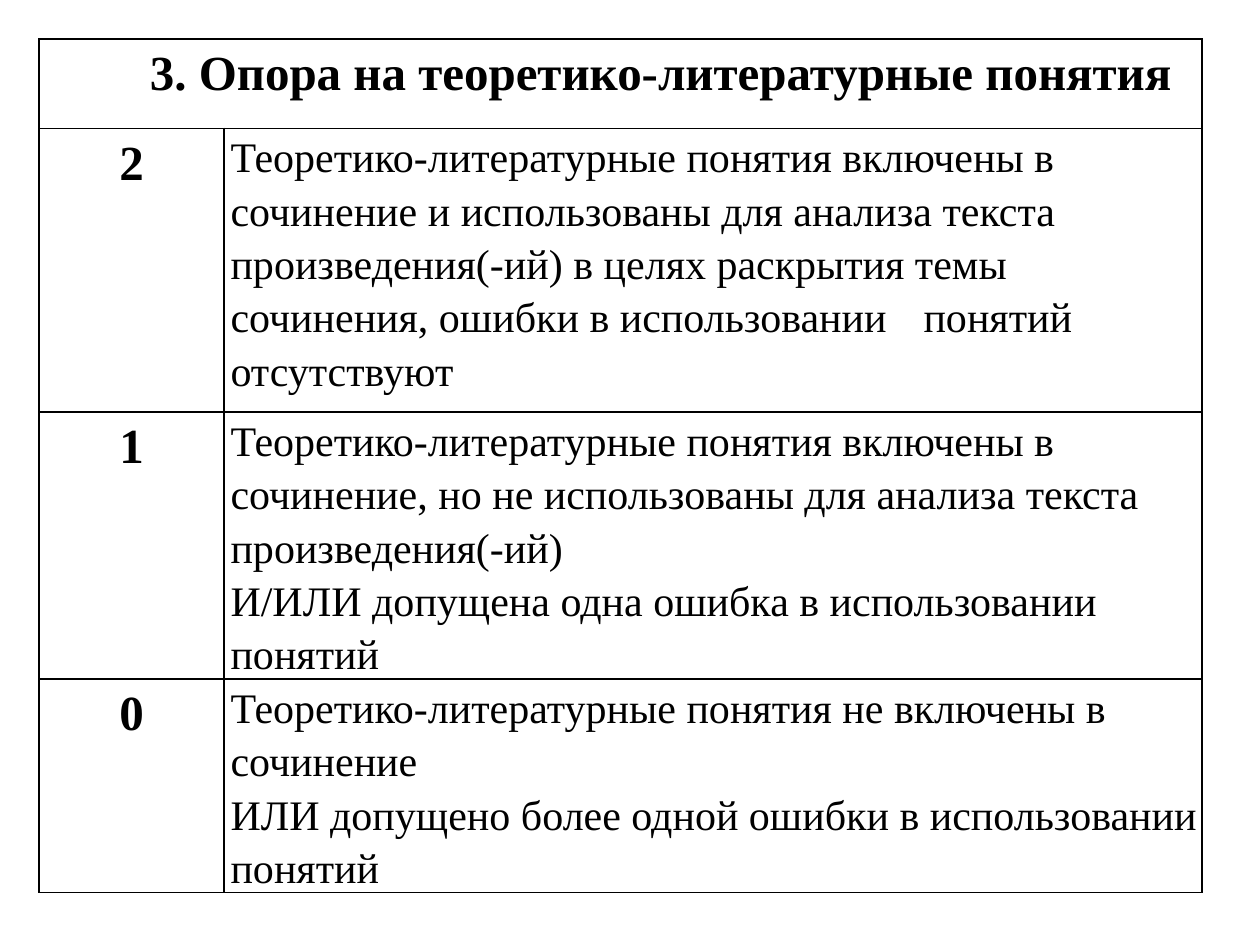
from pptx import Presentation, util as u
from pptx.dml.color import RGBColor
from pptx.enum import text
from pptx.oxml import parse_xml
from pptx.oxml.ns import nsdecls

BLACK = RGBColor(0, 0, 0)
WHITE = RGBColor(255, 255, 255)
HEADING = {"size": u.Pt(28), "bold": True}
BODY = {"size": u.Pt(24), "bold": False}
COLUMN_WIDTHS = [1.47, 7.76]
ROW_HEIGHTS = [0.71, 2.25, 1.62, 1.64]
CRITERION = "3. Опора на теоретико-литературные понятия"
SCORES = [
    ("2", ["Теоретико-литературные понятия включены в сочинение и использованы "
           "для анализа текста произведения(-ий) в целях раскрытия темы сочинения, "
           "ошибки в использовании\tпонятий отсутствуют"], 6.27),
    ("1", ["Теоретико-литературные понятия включены в сочинение, но не использованы "
           "для анализа текста произведения(-ий)",
           "И/ИЛИ допущена одна ошибка в использовании понятий"], None),
    ("0", ["Теоретико-литературные понятия не включены в сочинение",
           "ИЛИ допущено более одной ошибки в использовании\tпонятий"], 3.17),
]


class SlideBuilder:
    font_name = "Times New Roman"
    line_spacing = 1.15

    def __init__(self, slide):
        self.slide = slide

    def background(self, colour):
        fill = self.slide.background.fill
        fill.solid()
        fill.fore_color.rgb = colour

    def table(self, left, top, height, widths, heights):
        frame = self.slide.shapes.add_table(
            len(heights), len(widths), u.Inches(left), u.Inches(top),
            u.Inches(sum(widths)), u.Inches(height))
        grid = frame.table
        grid.first_row = grid.horz_banding = False
        for column, width in zip(grid.columns, widths):
            column.width = u.Inches(width)
        for row, row_height in zip(grid.rows, heights):
            row.height = u.Inches(row_height)
        frame.height = u.Inches(height)
        for cell in grid.iter_cells():
            self.frame_cell(cell)
        return grid

    def frame_cell(self, cell):
        for side in ("left", "top", "right", "bottom"):
            setattr(cell, f"margin_{side}", 0)
        cell.fill.background()
        properties = cell._tc.get_or_add_tcPr()
        for position, edge in enumerate("LRTB"):
            properties.insert(position, parse_xml(
                f'<a:ln{edge} {nsdecls("a")} w="{u.Pt(1)}"><a:solidFill>'
                f'<a:srgbClr val="{BLACK}"/></a:solidFill></a:ln{edge}>'))

    def cell_text(self, cell, lines, style, indent=0, align=text.PP_ALIGN.LEFT, tab=None):
        frame = cell.text_frame
        for index, line in enumerate(lines):
            paragraph = frame.add_paragraph() if index else frame.paragraphs[0]
            paragraph.alignment = align
            paragraph.line_spacing = self.line_spacing
            properties = paragraph._p.get_or_add_pPr()
            properties.set("marL", str(u.Inches(indent)))
            properties.set("indent", "0")
            if tab and "\t" in line:
                properties.append(parse_xml(
                    f'<a:tabLst {nsdecls("a")}><a:tab pos="{u.Inches(tab)}" '
                    f'algn="l"/></a:tabLst>'))
            run = paragraph.add_run()
            run.text = line
            for name, value in {"name": self.font_name, **style}.items():
                setattr(run.font, name, value)
            run.font.color.rgb = BLACK


def main():
    deck = Presentation()
    deck.slide_width, deck.slide_height = u.Inches(10), u.Inches(7.5)
    builder = SlideBuilder(deck.slides.add_slide(deck.slide_layouts[6]))
    builder.background(WHITE)

    rubric = builder.table(0.31, 0.31, 7.15, COLUMN_WIDTHS, ROW_HEIGHTS)
    rubric.cell(0, 0).merge(rubric.cell(0, 1))
    builder.cell_text(rubric.cell(0, 0), [CRITERION], HEADING, indent=0.88)
    for row, (score, descriptions, tab) in enumerate(SCORES, start=1):
        builder.cell_text(rubric.cell(row, 0), [score], HEADING, align=text.PP_ALIGN.CENTER)
        builder.cell_text(rubric.cell(row, 1), descriptions, BODY, indent=0.05, tab=tab)

    deck.save("out.pptx")


if __name__ == "__main__":
    main()
